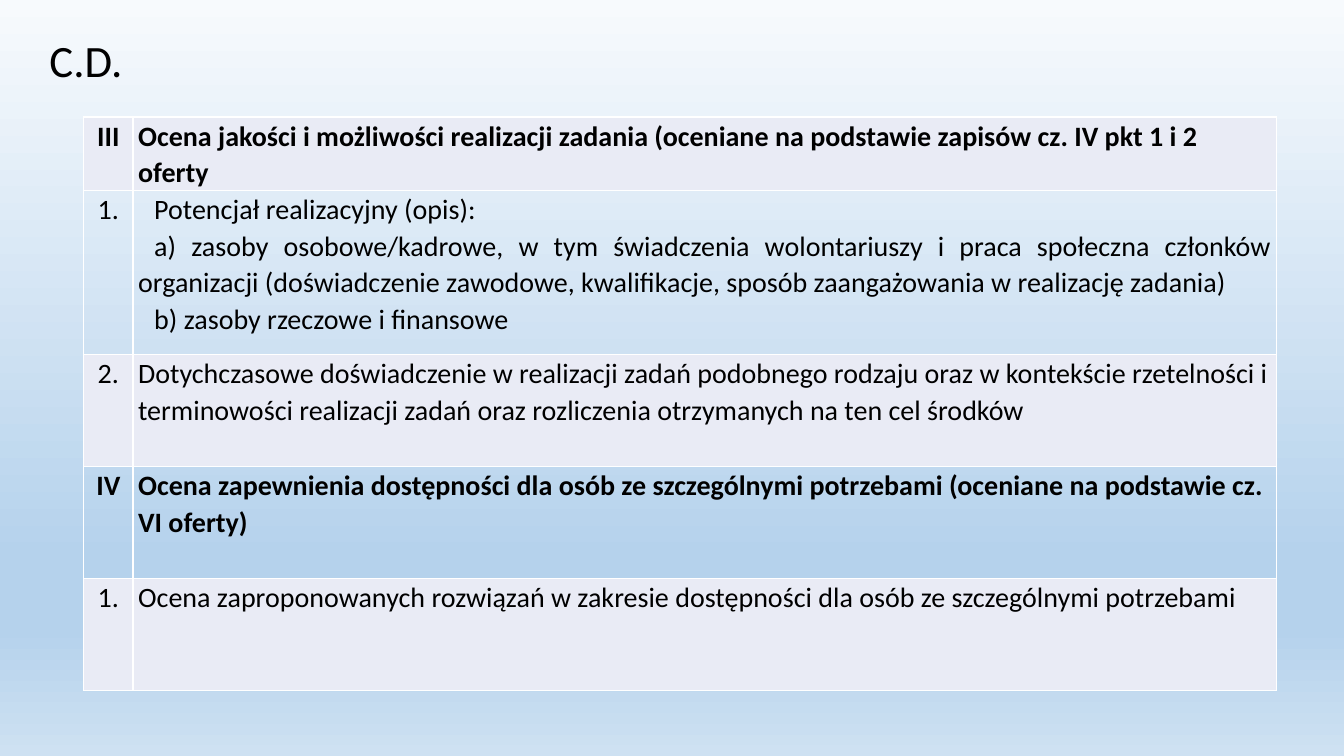
from lxml.etree import SubElement
from pptx import Presentation
from pptx.dml.color import RGBColor
from pptx.enum.text import MSO_ANCHOR, PP_ALIGN
from pptx.oxml.ns import qn
from pptx.util import Inches, Pt

COLORS = {"text": "000000", "band": "E9EBF5", "border": "FFFFFF"}
SKY = [(0, "F7FAFD"), (74, "B5D2EC"), (83, "B5D2EC"), (100, "CEE1F2")]
COLUMN_WIDTHS = [0.49, 11.34]
ROW_HEIGHTS = [0.73, 1.63, 1.11, 1.11, 1.11]
LEFT, JUSTIFY = PP_ALIGN.LEFT, PP_ALIGN.JUSTIFY
CRITERIA = [
    ("III", True, LEFT, [
        "Ocena jakości i możliwości realizacji zadania (oceniane na podstawie "
        "zapisów cz. IV pkt 1 i 2 oferty"]),
    ("1.", False, JUSTIFY, [
        "Potencjał realizacyjny (opis):",
        "a) zasoby osobowe/kadrowe, w tym świadczenia wolontariuszy i praca "
        "społeczna członków organizacji (doświadczenie zawodowe, kwalifikacje, "
        "sposób zaangażowania w realizację zadania)",
        "b) zasoby rzeczowe i finansowe"]),
    ("2.", False, LEFT, [
        "Dotychczasowe doświadczenie w realizacji zadań podobnego rodzaju oraz "
        "w kontekście rzetelności i terminowości realizacji zadań oraz "
        "rozliczenia otrzymanych na ten cel środków"]),
    ("IV", True, LEFT, [
        "Ocena zapewnienia dostępności dla osób ze szczególnymi potrzebami "
        "(oceniane na podstawie cz. VI oferty)"]),
    ("1.", False, JUSTIFY, [
        "Ocena zaproponowanych rozwiązań w zakresie dostępności dla osób ze "
        "szczególnymi potrzebami"]),
]


class CriteriaSlide:
    """Holds the slide and its style, with one method per kind of element."""

    def __init__(self, slide, font="Calibri"):
        self.slide = slide
        self.font = font

    def background(self, stops):
        fill = self.slide.background.fill
        fill.gradient()
        fill.gradient_angle = 270
        stop_list = self.slide.element.find(".//" + qn("a:gsLst"))
        for default_stop in list(stop_list):
            stop_list.remove(default_stop)
        for percent, color in stops:
            stop = SubElement(stop_list, qn("a:gs"), pos=str(percent * 1000))
            SubElement(stop, qn("a:srgbClr"), val=color)

    def run(self, paragraph, text, size, bold=False):
        run = paragraph.add_run()
        run.text = text
        run.font.name = self.font
        run.font.size = Pt(size)
        run.font.bold = bold
        run.font.color.rgb = RGBColor.from_string(COLORS["text"])

    def title(self, text, left, top, width, height):
        title = self.slide.shapes.title
        title.left, title.top = Inches(left), Inches(top)
        title.width, title.height = Inches(width), Inches(height)
        title.text_frame.vertical_anchor = MSO_ANCHOR.MIDDLE
        heading = title.text_frame.paragraphs[0]
        heading.alignment = LEFT
        heading.line_spacing = 0.9
        self.run(heading, text, 32)

    def cell(self, cell, texts, alignment, bold, banded):
        cell.margin_left = cell.margin_right = Inches(0.05)
        cell.margin_top = cell.margin_bottom = 0
        properties = cell._tc.get_or_add_tcPr()
        for side in ("lnL", "lnR", "lnT", "lnB"):
            border = SubElement(properties, qn("a:" + side), w=str(Pt(1)))
            solid = SubElement(border, qn("a:solidFill"))
            SubElement(solid, qn("a:srgbClr"), val=COLORS["border"])
        if banded:
            cell.fill.solid()
            cell.fill.fore_color.rgb = RGBColor.from_string(COLORS["band"])
        else:
            cell.fill.background()
        frame = cell.text_frame
        is_list = len(texts) > 1
        for index, text in enumerate(texts):
            paragraph = frame.add_paragraph() if index else frame.paragraphs[0]
            paragraph.alignment = alignment
            paragraph.line_spacing = 1.07
            paragraph.space_after = Pt(0 if is_list else 8)
            if is_list:
                paragraph._p.get_or_add_pPr().set("indent", str(Inches(0.16)))
            self.run(paragraph, text, 20, bold)

    def table(self, criteria, left, top):
        table = self.slide.shapes.add_table(
            len(criteria), len(COLUMN_WIDTHS), Inches(left), Inches(top),
            Inches(sum(COLUMN_WIDTHS)), Inches(sum(ROW_HEIGHTS))).table
        table.first_row = table.horz_banding = False
        for column, width in zip(table.columns, COLUMN_WIDTHS):
            column.width = Inches(width)
        for index, (number, bold, alignment, texts) in enumerate(criteria):
            table.rows[index].height = Inches(ROW_HEIGHTS[index])
            banded = index % 2 == 0
            self.cell(table.cell(index, 0), [number], PP_ALIGN.CENTER, bold, banded)
            self.cell(table.cell(index, 1), texts, alignment, bold, banded)


def main():
    presentation = Presentation()
    presentation.slide_width = Inches(13.33)
    presentation.slide_height = Inches(7.5)
    page = CriteriaSlide(presentation.slides.add_slide(presentation.slide_layouts[5]))
    page.background(SKY)
    page.title("C.D.", 0.39, 0.4, 12.02, 0.45)
    page.table(CRITERIA, 0.83, 1.16)
    presentation.save("out.pptx")


if __name__ == "__main__":
    main()
